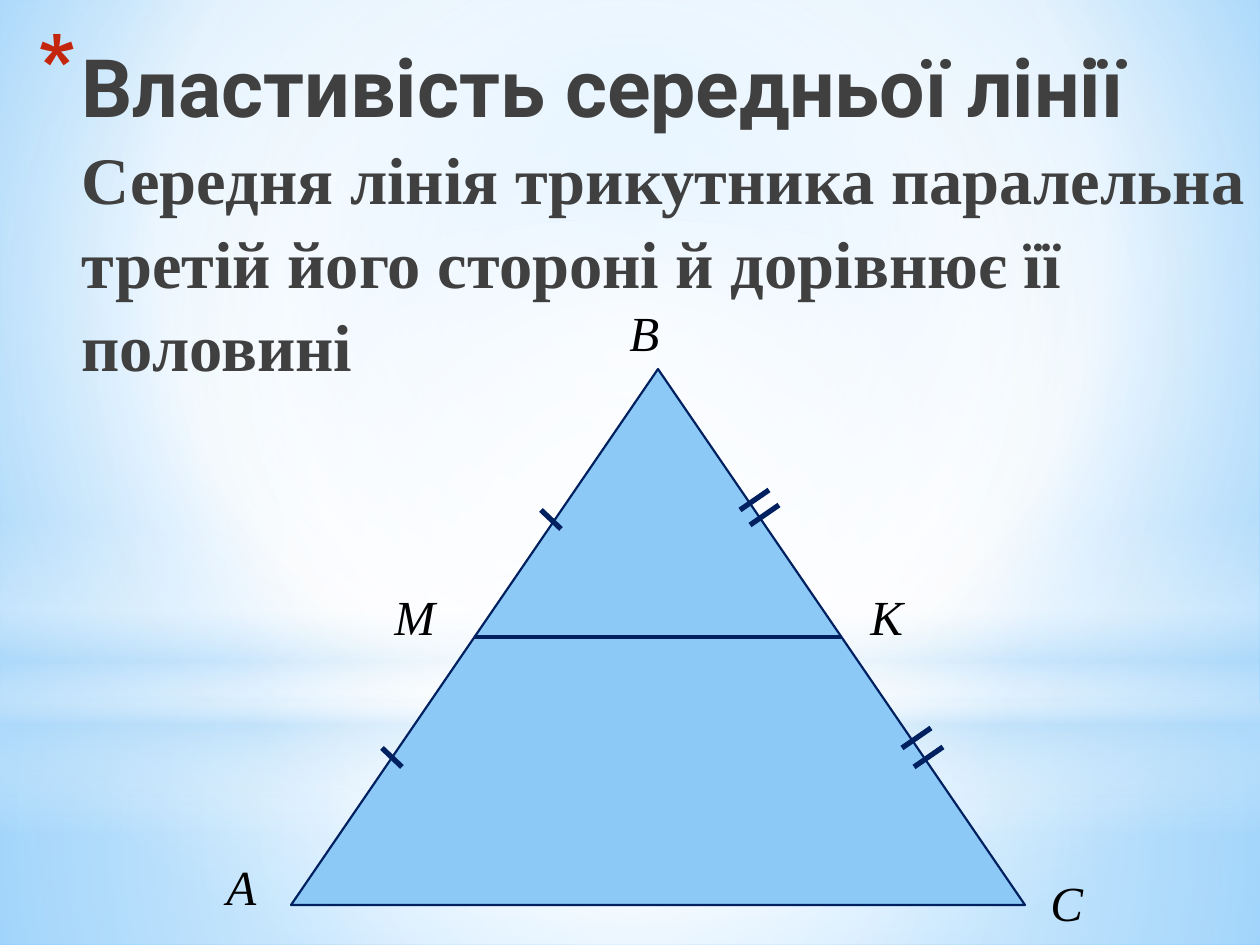
from lxml import etree
from pptx import Presentation
from pptx.dml.color import RGBColor
from pptx.enum.shapes import MSO_CONNECTOR, MSO_SHAPE
from pptx.enum.text import MSO_ANCHOR, MSO_AUTO_SIZE, PP_ALIGN
from pptx.oxml import parse_xml
from pptx.oxml.ns import nsdecls, qn
from pptx.util import Pt

RECT, OVAL = MSO_SHAPE.RECTANGLE, MSO_SHAPE.OVAL
TRIANGLE = MSO_SHAPE.ISOSCELES_TRIANGLE
STRAIGHT = MSO_CONNECTOR.STRAIGHT
TOP, LEFT = MSO_ANCHOR.TOP, PP_ALIGN.LEFT
NO_FIT, GROW = MSO_AUTO_SIZE.NONE, MSO_AUTO_SIZE.SHAPE_TO_FIT_TEXT

WIDTH, HEIGHT = 1260, 945
EMU_PER_PX = 914400 / 126
CENTER = (50, 50, 50, 50)


def px(n):
    return round(n * EMU_PER_PX)


def rgb(value):
    return RGBColor.from_string(value)


def set_gradient(parent, stops, focus=None):
    """Swap the solid fill for a gradient of (position, colour, opacity) stops.

    A focus rectangle gives a circular gradient, none gives a vertical one.
    """
    gs = "".join(
        f'<a:gs pos="{pos * 1000}"><a:srgbClr val="{color}">'
        f'<a:alpha val="{opacity * 1000}"/></a:srgbClr></a:gs>'
        for pos, color, opacity in stops)
    shade = '<a:lin ang="5400000" scaled="0"/>'
    if focus:
        sides = " ".join(f'{k}="{v * 1000}"' for k, v in zip("ltrb", focus))
        shade = f'<a:path path="circle"><a:fillToRect {sides}/></a:path>'
    solid = parent.find(qn("a:solidFill"))
    parent.replace(solid, parse_xml(
        f'<a:gradFill {nsdecls("a")} rotWithShape="1">'
        f'<a:gsLst>{gs}</a:gsLst>{shade}</a:gradFill>'))


class Deck:
    navy, sky, ink, accent = "002060", "8CC9F7", "404040", "C3260C"
    label_font = {"name": "Times New Roman", "size": Pt(28), "italic": True}
    heading_font = {"name": "Roboto", "size": Pt(46), "bold": True}
    text_font = {"name": "Times New Roman", "size": Pt(38), "bold": True}

    def __init__(self, prs):
        self.s = prs.slides.add_slide(prs.slide_layouts[5])

    def background(self, stops, focus):
        fill = self.s.background.fill
        fill.solid()
        fill.fore_color.rgb = rgb("FFFFFF")
        set_gradient(self.s.element.xpath(".//p:bgPr")[0], stops, focus)

    def shape(self, kind, x, y, w, h, color="FFFFFF"):
        sp = self.s.shapes.add_shape(kind, px(x), px(y), px(w), px(h))
        sp.shadow.inherit = False
        sp.fill.solid()
        sp.fill.fore_color.rgb = rgb(color)
        sp.line.fill.background()
        return sp

    def glow(self, kind, y, h, stops, focus=None):
        sp = self.shape(kind, 0, y, WIDTH, h)
        set_gradient(sp.element.spPr, stops, focus)

    def triangle(self, x, y, w, h):
        sp = self.shape(TRIANGLE, x, y, w, h, self.sky)
        sp.line.color.rgb = rgb(self.navy)
        sp.line.width = Pt(1.25)

    def line(self, x, y, dx, dy, width):
        c = self.s.shapes.add_connector(
            STRAIGHT, px(x), px(y), px(x + dx), px(y + dy))
        c.line.color.rgb = rgb(self.navy)
        c.line.width = Pt(width)
        etree.SubElement(c.element.spPr, qn("a:effectLst"))

    def run(self, p, text, font, color):
        r = p.add_run()
        r.text = text
        for name, value in font.items():
            setattr(r.font, name, value)
        r.font.color.rgb = rgb(color)

    def label(self, text, x, y, w):
        sp = self.s.shapes.add_textbox(px(x), px(y), px(w), px(72))
        tf = sp.text_frame
        tf.word_wrap = False
        tf.auto_size = GROW
        self.run(tf.paragraphs[0], text, self.label_font, "000000")

    def title(self, x, y, w, h, heading, text):
        sp = self.s.shapes.title
        sp.left, sp.top, sp.width, sp.height = px(x), px(y), px(w), px(h)
        self.s.shapes.element.append(sp.element)  # in front of the backdrop
        tf = sp.text_frame
        tf.word_wrap, tf.auto_size, tf.vertical_anchor = True, NO_FIT, TOP
        p = tf.paragraphs[0]
        p.alignment, p.line_spacing = LEFT, 1.05
        self.run(p, heading, self.heading_font, self.ink)
        p.add_line_break()
        self.run(p, text, self.text_font, self.ink)
        self.bullet(p, "*", 44)

    def bullet(self, p, char, indent):
        ppr = p._p.get_or_add_pPr()
        ppr.set("marL", str(px(indent)))
        ppr.set("indent", str(-px(indent)))
        color = etree.SubElement(ppr, qn("a:buClr"))
        etree.SubElement(color, qn("a:srgbClr"), val=self.accent)
        etree.SubElement(ppr, qn("a:buSzPct"), val="128000")
        etree.SubElement(ppr, qn("a:buChar"), char=char)


def main():
    prs = Presentation()
    prs.slide_width, prs.slide_height = px(WIDTH), px(HEIGHT)
    deck = Deck(prs)

    white, pale = "FFFFFF", "B4DCFA"
    deck.background([(0, "9ED5FF", 100), (60, white, 100),
                     (100, "5BB9FF", 100)], (20, 10, 20, 60))
    deck.glow(RECT, 703, 242,
              [(0, white, 91), (37, white, 76), (100, pale, 79)], CENTER)
    deck.glow(RECT, 0, 703,
              [(0, white, 89), (48, white, 62), (100, pale, 79)], CENTER)
    deck.glow(RECT, 519, 315,
              [(0, white, 0), (29, white, 30), (45, pale, 40),
               (55, white, 26), (65, pale, 60), (100, white, 0)])
    deck.glow(OVAL, 220, 703, [(0, white, 100), (56, white, 0)], CENTER)

    deck.title(25, 26, 1280, 158, "Властивість середньої лінії",
               "Середня лінія трикутника паралельна третій його стороні "
               "й дорівнює її половині")

    left, top, base, height = 291, 369, 734, 536
    deck.triangle(left, top, base, height)
    deck.line(left + base // 4, top + height // 2, base // 2, 0, 2.25)

    for text, x, y, w in [("A", 214, 850, 59), ("B", 617, 296, 55),
                          ("C", 1038, 866, 58), ("M", 382, 580, 67),
                          ("K", 858, 580, 58)]:
        deck.label(text, x, y, w)

    for x, y in [(382, 748), (541, 510)]:
        deck.line(x, y, 20, 19, 3)
    for x, y in [(740, 510), (750, 525), (902, 748), (914, 767)]:
        deck.line(x, y, 29, -20, 3)

    prs.save("out.pptx")


if __name__ == "__main__":
    main()
